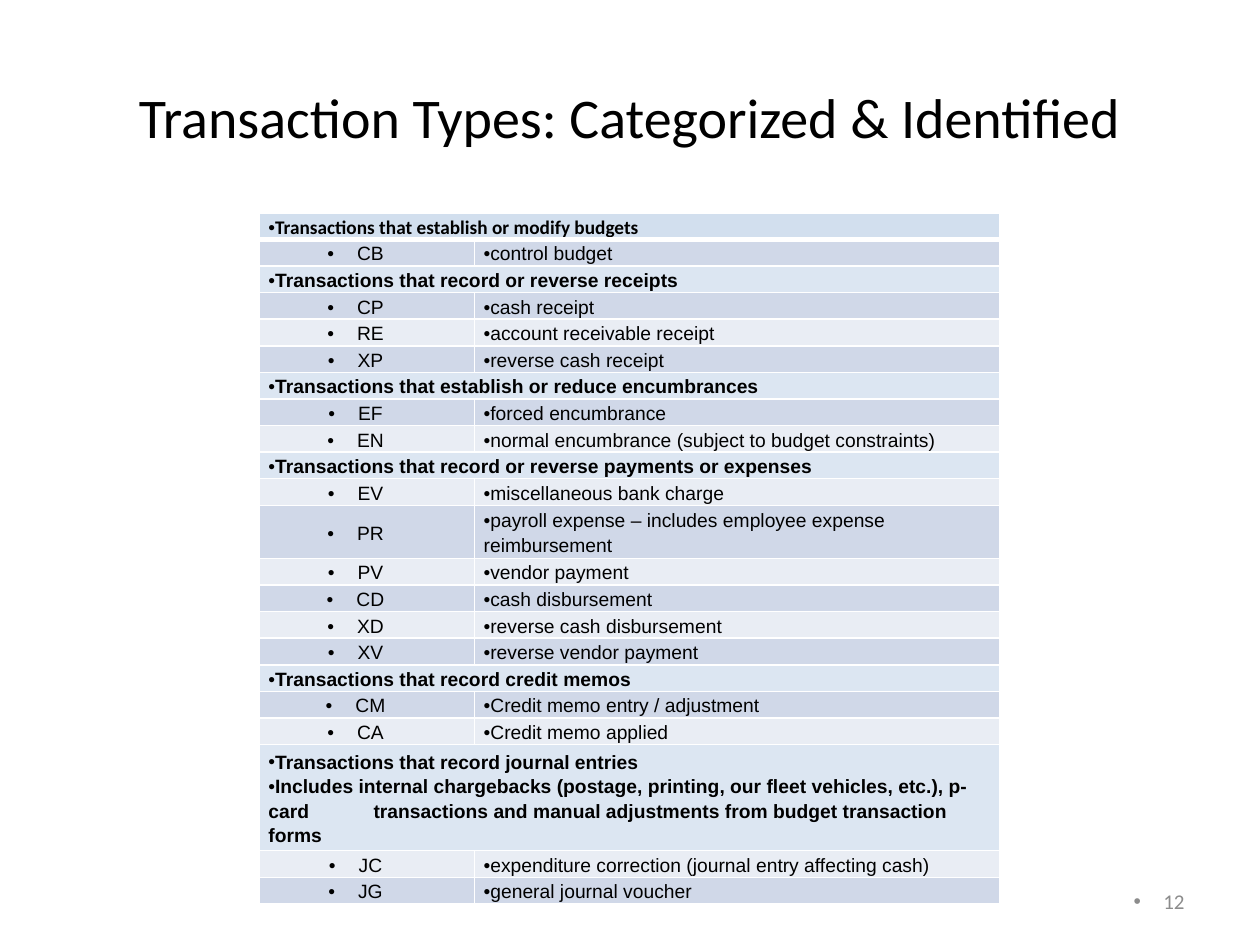
from lxml import etree
from pptx import Presentation
from pptx import util as u
from pptx.dml.color import RGBColor
from pptx.enum import text
from pptx.oxml.ns import qn

TITLE = "Transaction Types: Categorized & Identified"
PAGE_NUMBER = "12"
# Each category: heading paragraphs, then (code, description) pairs
CATEGORIES = [
    (["Transactions that establish or modify budgets"],
     [("CB", "control budget")]),
    (["Transactions that record or reverse receipts"],
     [("CP", "cash receipt"),
      ("RE", "account receivable receipt"),
      ("XP", "reverse cash receipt")]),
    (["Transactions that establish or reduce encumbrances"],
     [("EF", "forced encumbrance"),
      ("EN", "normal encumbrance (subject to budget constraints)")]),
    (["Transactions that record or reverse payments or expenses"],
     [("EV", "miscellaneous bank charge"),
      ("PR", "payroll expense – includes employee expense reimbursement"),
      ("PV", "vendor payment"),
      ("CD", "cash disbursement"),
      ("XD", "reverse cash disbursement"),
      ("XV", "reverse vendor payment")]),
    (["Transactions that record credit memos"],
     [("CM", "Credit memo entry / adjustment"),
      ("CA", "Credit memo applied")]),
    (["Transactions that record journal entries",
      "Includes internal chargebacks (postage, printing, our fleet vehicles, etc.), "
      "p-card\ttransactions and manual adjustments from budget transaction forms"],
     [("JC", "expenditure correction (journal entry affecting cash)"),
      ("JG", "general journal voucher")]),
]

COLORS = {"text": "000000", "page": "8C8C8C", "border": "FFFFFF",
          "first": "D2DFEE", "heading": "DCE6F2", "odd": "D0D8E8", "even": "E9EDF4"}
COLUMN_WIDTHS = [u.Cm(4.34), u.Cm(10.59)]
LINE_HEIGHT = u.Cm(0.52)
TAB_STOP = u.Cm(2.12)
HANGING = {"marL": u.Cm(0.12), "indent": u.Cm(-0.6)}
FLUSH = {"marL": 0, "indent": 0}
CELL_FORMAT = {"margin_left": u.Cm(0.18), "margin_right": u.Cm(0.18),
               "margin_top": 0, "margin_bottom": 0,
               "vertical_anchor": text.MSO_ANCHOR.MIDDLE}
ALIGN = text.PP_ALIGN


def apply(target, values):
    for name, value in values.items():
        setattr(target, name, value)


def write(paragraph, words, size, font="Calibri", color="text", bold=False, align=ALIGN.LEFT):
    paragraph.alignment = align
    run = paragraph.add_run()
    run.text = words
    apply(run.font, {"size": u.Pt(size), "name": font, "bold": bold})
    run.font.color.rgb = RGBColor.from_string(COLORS[color])


def add_bullet(paragraph, indents):
    properties = paragraph._p.get_or_add_pPr()
    for name, value in indents.items():
        properties.set(name, str(int(value)))
    etree.SubElement(properties, qn("a:buFont"), typeface="Arial")
    etree.SubElement(properties, qn("a:buChar"), char="•")


def add_tab_stop(paragraph):
    stops = etree.SubElement(paragraph._p.get_or_add_pPr(), qn("a:tabLst"))
    etree.SubElement(stops, qn("a:tab"), pos=str(int(TAB_STOP)), algn="l")


def style_cell(cell, fill, bottom_width):
    apply(cell, CELL_FORMAT)
    properties = cell._tc.get_or_add_tcPr()
    for side, width in (("L", 1), ("R", 1), ("T", 1), ("B", bottom_width)):
        line = etree.SubElement(properties, qn(f"a:ln{side}"), w=str(int(u.Pt(width))))
        solid = etree.SubElement(line, qn("a:solidFill"))
        etree.SubElement(solid, qn("a:srgbClr"), val=COLORS["border"])
    cell.fill.solid()
    cell.fill.fore_color.rgb = RGBColor.from_string(COLORS[fill])


def fill_cell(cell, lines, font="Arial", bold=False, align=ALIGN.LEFT, indents=FLUSH):
    for index, line in enumerate(lines):
        frame = cell.text_frame
        paragraph = frame.add_paragraph() if index else frame.paragraphs[0]
        paragraph.line_spacing = 1.15
        write(paragraph, line, 11, font, bold=bold, align=align)
        add_bullet(paragraph, indents)
        if "\t" in line:
            add_tab_stop(paragraph)


def add_label(slide, box, words, **style):
    frame = slide.shapes.add_textbox(*map(u.Cm, box)).text_frame
    apply(frame, {"word_wrap": True, "vertical_anchor": text.MSO_ANCHOR.MIDDLE})
    write(frame.paragraphs[0], words, **style)
    return frame.paragraphs[0]


def add_transactions(slide):
    row_count = sum(1 + len(entries) for _, entries in CATEGORIES)
    table = slide.shapes.add_table(row_count, 2, u.Cm(5.23), u.Cm(4.29),
                                   sum(COLUMN_WIDTHS), row_count * LINE_HEIGHT).table
    apply(table, {"first_row": False, "horz_banding": False})
    for column, width in zip(table.columns, COLUMN_WIDTHS):
        column.width = width
    for row in table.rows:
        row.height = LINE_HEIGHT

    row = 0
    for headings, entries in CATEGORIES:
        first = row == 0
        left, right = table.cell(row, 0), table.cell(row, 1)
        for cell in (left, right):
            style_cell(cell, "first" if first else "heading", 3 if first else 1)
        left.merge(right)
        fill_cell(left, headings, "Calibri" if first else "Arial", bold=True)
        if len(headings) > 1:
            table.rows[row].height = 3 * LINE_HEIGHT
        for row, (code, description) in enumerate(entries, row + 1):
            left, right = table.cell(row, 0), table.cell(row, 1)
            for cell in (left, right):
                style_cell(cell, "odd" if row % 2 else "even", 1)
            fill_cell(left, [code], align=ALIGN.CENTER, indents=HANGING)
            fill_cell(right, [description])
        row += 1


def main():
    deck = Presentation()
    apply(deck, {"slide_width": u.Cm(25.4), "slide_height": u.Cm(19.05)})
    slide = deck.slides.add_slide(deck.slide_layouts[6])
    add_label(slide, (1.27, 0.76, 22.86, 3.18), TITLE, size=32, align=ALIGN.CENTER)
    add_transactions(slide)
    page = add_label(slide, (18.2, 17.66, 5.93, 1.01), PAGE_NUMBER,
                     size=12, color="page", align=ALIGN.RIGHT)
    add_bullet(page, HANGING)
    deck.save("out.pptx")


if __name__ == "__main__":
    main()
